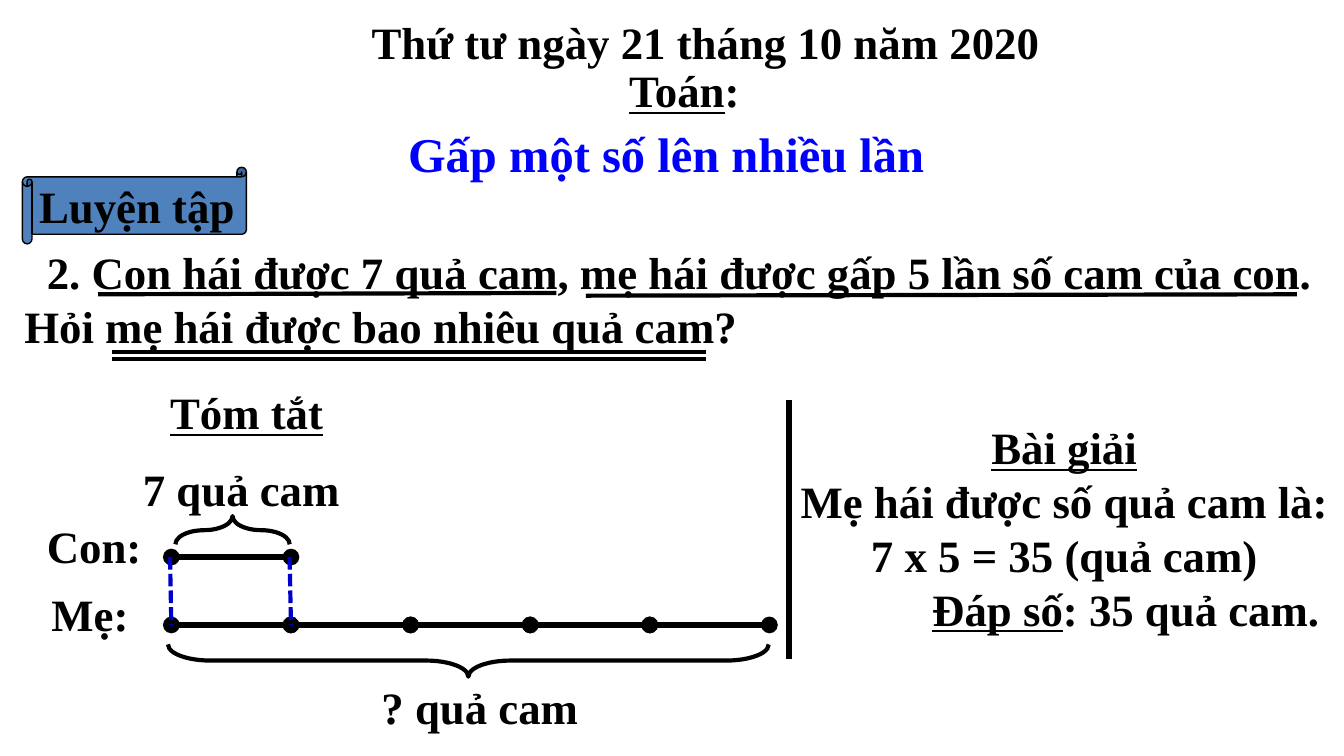
"""Build a maths lesson slide on multiplying a number several times."""
from pptx import Presentation
from pptx.dml.color import RGBColor
from pptx.enum import dml, shapes, text
from pptx.oxml.ns import qn
from pptx import util as u
from lxml import etree

BLACK = RGBColor(0x00, 0x00, 0x00)
BLUE = RGBColor(0x00, 0x00, 0xFF)
DASH_BLUE = RGBColor(0x00, 0x00, 0xCC)
SCROLL_BLUE = RGBColor(0x4F, 0x81, 0xBD)
LEFT, CENTER = text.PP_ALIGN.LEFT, text.PP_ALIGN.CENTER
TOP, MIDDLE = text.MSO_ANCHOR.TOP, text.MSO_ANCHOR.MIDDLE


def write(para, words, size=24, color=BLACK, underline=False):
    """Add one bold span to a paragraph."""
    span = para.add_run()
    span.text = words
    font = span.font
    font.name, font.size, font.bold = "Times New Roman", u.Pt(size), True
    font.underline = underline
    font.color.rgb = color


class Lesson:
    """Hold the style and the page, on a grid of 100 columns by 56.25 rows."""

    def __init__(self):
        self.deck = Presentation()
        self.deck.slide_width = self.cells(100)
        self.deck.slide_height = self.cells(56.25)
        self.page = self.deck.slides.add_slide(self.deck.slide_layouts[6])

    def cells(self, count):
        """Turn columns or rows into a length."""
        return u.Inches(count / 10)

    def area(self, *counts):
        """Turn several grid counts into lengths."""
        return [self.cells(count) for count in counts]

    def text(self, area, *lines, align=CENTER, anchor=TOP, indent=0, **style):
        """Place a text box; a line is a string or (words, underline) pairs."""
        box = self.page.shapes.add_textbox(*self.area(*area))
        frame = box.text_frame
        frame.word_wrap, frame.vertical_anchor = True, anchor
        for number, line in enumerate(lines):
            para = frame.paragraphs[0] if number == 0 else frame.add_paragraph()
            para.alignment = align
            if indent:
                para._p.get_or_add_pPr().set("indent", str(self.cells(indent)))
            spans = [(line, False)] if isinstance(line, str) else line
            for words, underline in spans:
                write(para, words, underline=underline, **style)
        return box

    def label(self, area, *lines):
        """Place a left-aligned label centred on its row."""
        return self.text(area, *lines, align=LEFT, anchor=MIDDLE)

    def scroll(self, area, words):
        """Place a filled scroll with a heading."""
        scroll = self.page.shapes.add_shape(
            shapes.MSO_SHAPE.HORIZONTAL_SCROLL, *self.area(*area))
        scroll.shadow.inherit = False
        scroll.fill.solid()
        scroll.fill.fore_color.rgb = SCROLL_BLUE
        scroll.line.color.rgb, scroll.line.width = BLACK, u.Pt(0.75)
        frame = scroll.text_frame
        frame.word_wrap, frame.vertical_anchor = False, MIDDLE
        frame.paragraphs[0].alignment = CENTER
        write(frame.paragraphs[0], words)

    def brace(self, left, top, span, depth, curve, turn):
        """Place a brace lying on its side; turn 90 points up, 270 down."""
        area = (left + (span - depth) / 2, top + (depth - span) / 2, depth, span)
        brace = self.page.shapes.add_shape(
            shapes.MSO_SHAPE.LEFT_BRACE, *self.area(*area))
        brace.shadow.inherit = False
        brace.rotation = turn
        brace.adjustments[0] = curve
        brace.fill.background()
        brace.line.color.rgb, brace.line.width = BLACK, u.Pt(2.25)

    def line(self, start, end, color=BLACK, width=2.25, dash=None, dots=False):
        """Draw a straight line, with round dots at its ends if asked."""
        line = self.page.shapes.add_connector(
            shapes.MSO_CONNECTOR.STRAIGHT, *self.area(*start, *end))
        line.line.color.rgb, line.line.width = color, u.Pt(width)
        if dash:
            line.line.dash_style = dash
        if dots:
            for name in ("a:headEnd", "a:tailEnd"):
                etree.SubElement(line.line._get_or_add_ln(), qn(name), type="oval")
        etree.SubElement(line._element.spPr, qn("a:effectLst"))


def build():
    """Lay out the lesson and save it."""
    lesson = Lesson()
    lesson.text((25.83, 0.6, 53.3, 5), "Thứ tư ngày 21 tháng 10 năm 2020")
    lesson.text((45.83, 4.2, 10.8, 5), [("Toán", True), (":", False)], align=LEFT)
    lesson.text((11.7, 8.75, 75.8, 5.4), "Gấp một số lên nhiều lần",
                size=26, color=BLUE)
    lesson.scroll((1.67, 12.45, 16.67, 5.7), "Luyện tập")

    lesson.text((0.83, 17.65, 98.3, 9.1),
                "2. Con hái được 7 quả cam, mẹ hái được gấp 5 lần số cam của con. "
                "Hỏi mẹ hái được bao nhiêu quả cam?",
                align=LEFT, anchor=MIDDLE, indent=1.67)
    lesson.line((7.3, 21.9), (41.4, 21.8))
    lesson.line((43.6, 22), (96.5, 21.9))
    for row in (26.2, 26.7):
        lesson.line((8.3, row), (52.5, row))

    solution = lesson.text(
        (53.33, 30.65, 51.7, 17.2),
        [("Bài giải", True)],
        "Mẹ hái được số quả cam là:",
        "7 x 5 = 35 (quả cam)",
        [("Đáp số", True), (": 35 quả cam.", False)],
        anchor=MIDDLE)
    answer = solution.text_frame.paragraphs[-1]
    answer._p.get_or_add_pPr().set("marL", str(lesson.cells(9.17)))
    lesson.line((58.7, 29.8), (58.7, 49), width=3)

    lesson.label((11.67, 28.15, 14.8, 5), [("Tóm tắt", True)])
    lesson.label((2.5, 38.1, 14.4, 5), "Con:")
    lesson.label((2.85, 43.15, 10.6, 5), "Mẹ:")
    lesson.text((6.45, 33.9, 23, 5), "7 quả cam")
    lesson.text((21.7, 50.1, 28, 5), "? quả cam")
    lesson.brace(13.05, 38.4, 8.5, 2.1, curve=1.13, turn=90)
    lesson.brace(12.5, 47.95, 44.7, 2.4, curve=1.31, turn=270)

    origin, part, child_row, mother_row = 12.75, 8.9, 41.45, 46.5
    segments = [(child_row, 0)] + [(mother_row, index) for index in range(5)]
    for row, index in segments:
        left = origin + index * part
        lesson.line((left, row), (left + part, row), width=3, dots=True)
    for column in (origin, origin + part):
        lesson.line((column - 0.1, child_row), (column, mother_row),
                    color=DASH_BLUE, dash=dml.MSO_LINE.SQUARE_DOT)
    lesson.deck.save("out.pptx")


if __name__ == "__main__":
    build()
